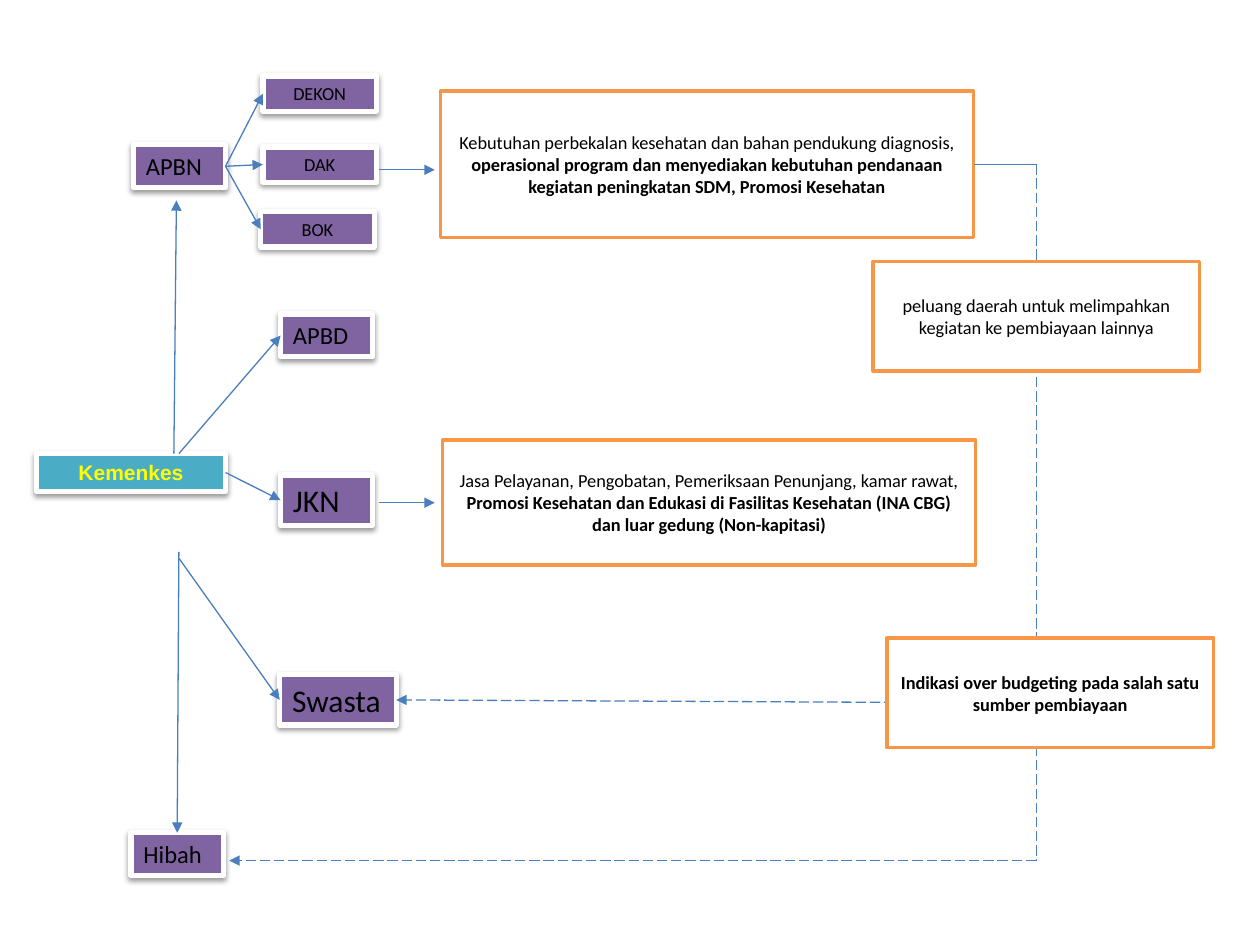
"""Build a slide that maps the health ministry's funding sources."""
import pptx
import pptx.dml.color
import pptx.enum.dml
import pptx.enum.shapes
import pptx.enum.text
import pptx.oxml
import pptx.oxml.ns
import pptx.util

COLS, ROWS = 100, 75
CELL = pptx.util.Inches(0.1)
COLORS = {
    "teal": "4BACC6", "purple": "8064A2", "orange": "F79646", "blue": "4B7EBC",
    "white": "FFFFFF", "black": "000000", "yellow": "FFFF00",
}
TOP, LEFT, BOTTOM, RIGHT = range(4)
ALIGN = pptx.enum.text.PP_ALIGN
ANCHOR = pptx.enum.text.MSO_ANCHOR
NODE_FONT = {"name": "Calibri", "size": pptx.util.Pt(14), "bold": False}
SMALL_FONT = {**NODE_FONT, "size": pptx.util.Pt(10.5)}
LARGE_FONT = {**NODE_FONT, "size": pptx.util.Pt(18)}
ROOT_FONT = {"name": "Arial", "size": pptx.util.Pt(12), "bold": True}
SHADOW = (
    '<a:outerShdw %s blurRad="39370" dist="20320" dir="5400000" rotWithShape="0">'
    '<a:srgbClr val="000000"><a:alpha val="38000"/></a:srgbClr></a:outerShdw>'
    % pptx.oxml.ns.nsdecls("a")
)

SOURCES = [
    ("Kemenkes", (2.9, 36, 15, 3), ROOT_FONT, ALIGN.CENTER),
    ("APBN", (10.6, 11.5, 7.3, 3.4), NODE_FONT, ALIGN.LEFT),
    ("APBD", (22.27, 24.93, 7.3, 3.4), NODE_FONT, ALIGN.LEFT),
    ("JKN", (22.27, 37.7, 7.3, 4), LARGE_FONT, ALIGN.LEFT),
    ("Swasta", (22.2, 53.55, 9.25, 4), LARGE_FONT, ALIGN.LEFT),
    ("Hibah", (10.4, 66.1, 7.33, 3.4), NODE_FONT, ALIGN.LEFT),
    ("DEKON", (20.87, 6.04, 9, 2.8), SMALL_FONT, ALIGN.CENTER),
    ("DAK", (20.87, 11.66, 9, 2.8), SMALL_FONT, ALIGN.CENTER),
    ("BOK", (20.7, 16.8, 9, 2.8), SMALL_FONT, ALIGN.CENTER),
]
USES = [
    ("needs", (34.97, 7.24, 42.3, 11.6), [
        ("Kebutuhan perbekalan kesehatan dan bahan pendukung diagnosis, ", False),
        ("operasional program dan menyediakan kebutuhan pendanaan kegiatan "
         "peningkatan SDM, Promosi Kesehatan", True)]),
    ("services", (35.13, 34.93, 42.3, 9.9), [
        ("Jasa Pelayanan, Pengobatan, Pemeriksaan Penunjang, kamar rawat, ", False),
        ("Promosi Kesehatan dan Edukasi di Fasilitas Kesehatan (INA CBG) "
         "dan luar gedung (Non-kapitasi)", True)]),
]
SHIFTS = [
    ((70.4, 50.64, 25.9, 8.7), [
        ("Indikasi over budgeting pada salah satu sumber pembiayaan", True)]),
    ((69.3, 20.76, 25.9, 8.7), [
        ("peluang daerah untuk melimpahkan kegiatan ke pembiayaan lainnya", False)]),
]
TRUNK = 82.24
TRUNK_TOP, TRUNK_BOTTOM = 13.04, 68.3
ARROWS = [
    ((13.8, 36), (14, 15.9)),
    ((14.2, 43.8), ("Hibah", TOP)),
    (("Kemenkes", RIGHT), ("JKN", LEFT)),
    ((14.2, 36), ("APBD", LEFT)),
    ((14.2, 44.3), ("Swasta", LEFT)),
    (("APBN", RIGHT), ("DEKON", LEFT)),
    (("APBN", RIGHT), ("BOK", LEFT)),
    (("APBN", RIGHT), ("DAK", LEFT)),
    ((30.1, 39.9), (34.5, 39.9)),
    ((30.1, 13.48), (34.5, 13.48)),
]
DASHED_ARROWS = [
    ((TRUNK, 55.8), ("Swasta", RIGHT)),
    ((TRUNK, TRUNK_BOTTOM), (18.2, TRUNK_BOTTOM)),
]


def grid(*cells):
    """Turn grid cells into slide lengths."""
    return [round(c * CELL) for c in cells]


def rgb(name):
    """Return a named colour."""
    return pptx.dml.color.RGBColor.from_string(COLORS[name])


def apply(target, values):
    """Set each format value on the target."""
    for key, value in values.items():
        setattr(target, key, value)


def add_box(slide, at, fill, line, width):
    """Add a flat rectangle with a coloured border."""
    sp = slide.shapes.add_shape(
        pptx.enum.shapes.MSO_SHAPE.RECTANGLE, *grid(*at))
    sp.shadow.inherit = False
    sp.fill.solid()
    sp.fill.fore_color.rgb = rgb(fill)
    sp.line.color.rgb = rgb(line)
    sp.line.width = pptx.util.Pt(width)
    return sp


def add_text(sp, runs, font, color, align, frame):
    """Write one paragraph of (text, bold) runs in a shape."""
    tf = sp.text_frame
    apply(tf, frame)
    p = tf.paragraphs[0]
    p.alignment = align
    for text, bold in runs:
        r = p.add_run()
        r.text = text
        apply(r.font, {**font, "bold": bold})
        r.font.color.rgb = rgb(color)


def add_source(slide, name, at, font, align):
    """Add a shadowed funding source box."""
    root = font is ROOT_FONT
    sp = add_box(slide, at, "teal" if root else "purple", "white", 3)
    effects = sp._element.spPr.find(pptx.oxml.ns.qn("a:effectLst"))
    effects.append(pptx.oxml.parse_xml(SHADOW))
    frame = {
        "word_wrap": name != "Swasta",
        "vertical_anchor": ANCHOR.TOP,
        "auto_size": pptx.enum.text.MSO_AUTO_SIZE.SHAPE_TO_FIT_TEXT,
    }
    add_text(sp, [(name, font["bold"])], font,
             "yellow" if root else "black", align, frame)
    return sp


def add_note(slide, at, runs):
    """Add an orange-framed explanation box."""
    sp = add_box(slide, at, "white", "orange", 2)
    add_text(sp, runs, SMALL_FONT, "black", ALIGN.CENTER,
             {"word_wrap": True, "vertical_anchor": ANCHOR.MIDDLE})
    return sp


def add_link(slide, boxes, start, end, dashed=False, arrow=True):
    """Add a line between grid points or (box, side) joints."""
    joints = [e if e[0] in boxes else None for e in (start, end)]
    points = [(0, 0) if j else e for j, e in zip(joints, (start, end))]
    cx = slide.shapes.add_connector(
        pptx.enum.shapes.MSO_CONNECTOR.STRAIGHT, *grid(*points[0], *points[1]))
    for joint, connect in zip(joints, (cx.begin_connect, cx.end_connect)):
        if joint:
            connect(boxes[joint[0]], joint[1])
    cx.line.color.rgb = rgb("blue")
    cx.line.width = pptx.util.Pt(0.75)
    if dashed:
        cx.line.dash_style = pptx.enum.dml.MSO_LINE.LONG_DASH
    if arrow:
        tail = pptx.oxml.parse_xml(
            '<a:tailEnd %s type="triangle"/>' % pptx.oxml.ns.nsdecls("a"))
        cx.line._get_or_add_ln().append(tail)
    cx._element.spPr.append(pptx.oxml.parse_xml(
        "<a:effectLst %s/>" % pptx.oxml.ns.nsdecls("a")))


def main():
    """Build and save the slide."""
    prs = pptx.Presentation()
    prs.slide_width, prs.slide_height = grid(COLS, ROWS)
    s = prs.slides.add_slide(prs.slide_layouts[6])
    boxes = {source[0]: add_source(s, *source) for source in SOURCES}
    boxes.update({name: add_note(s, at, runs) for name, at, runs in USES})
    for start, end in ARROWS:
        add_link(s, boxes, start, end)
    add_link(s, boxes, ("needs", RIGHT), (TRUNK, TRUNK_TOP), arrow=False)
    add_link(s, boxes, (TRUNK, TRUNK_TOP), (TRUNK, TRUNK_BOTTOM),
             dashed=True, arrow=False)
    for start, end in DASHED_ARROWS:
        add_link(s, boxes, start, end, dashed=True)
    for at, runs in SHIFTS:
        add_note(s, at, runs)
    prs.save("out.pptx")


if __name__ == "__main__":
    main()
